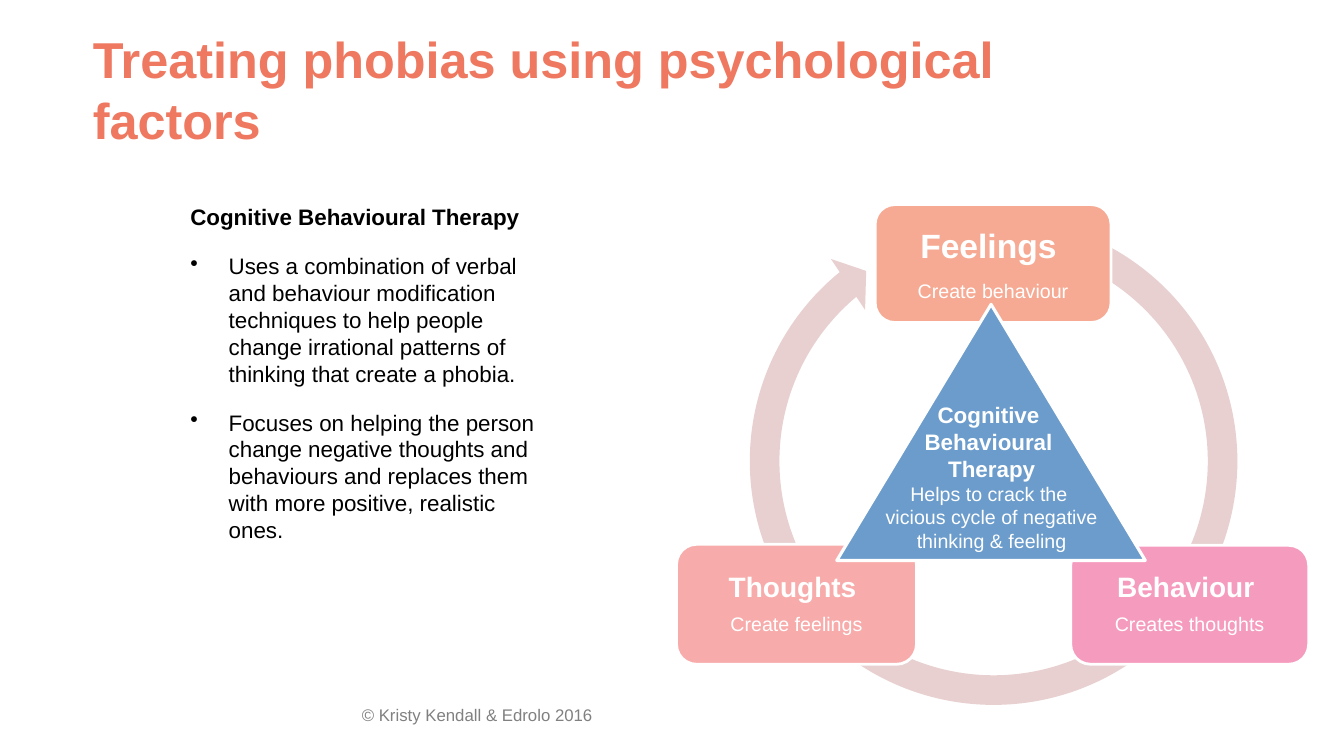
from lxml import etree
from pptx import Presentation
from pptx.dml.color import RGBColor
from pptx.enum import shapes, text
from pptx.oxml import ns
from pptx.util import Inches, Pt

COLORS = {
    "title": "EE7860", "body": "000000", "footer": "808080", "white": "FFFFFF",
    "ring": "E8D0D0", "feelings": "F6AA94", "behaviour": "F59CBE",
    "thoughts": "F7ACAB", "therapy": "6B9CCB",
}

prs = Presentation()
prs.slide_width, prs.slide_height = Inches(13.33), Inches(7.5)
s = prs.slides.add_slide(prs.slide_layouts[6])


def write(sp, lines, size=16, color="white", align=text.PP_ALIGN.LEFT,
          anchor=text.MSO_ANCHOR.TOP, inset=None, spacing=None,
          before=0, after=0):
    """Fill a shape with (text, format) lines; format may set size, bold, bullet, after."""
    tf = sp.text_frame
    tf.word_wrap = True
    tf.vertical_anchor = anchor
    if inset is not None:
        tf.margin_left = tf.margin_right = Inches(inset)
        tf.margin_top = tf.margin_bottom = Inches(inset)
    for i, (words, fmt) in enumerate(lines):
        p = tf.paragraphs[0] if i == 0 else tf.add_paragraph()
        if fmt.get("bullet"):
            pPr = p._p.get_or_add_pPr()
            pPr.set("marL", str(Inches(0.38)))
            pPr.set("indent", str(-Inches(0.38)))
            etree.SubElement(pPr, ns.qn("a:buChar")).set("char", "•")
        p.alignment = align
        p.line_spacing = spacing
        p.space_before = Pt(before if i else 0)
        p.space_after = Pt(fmt.get("after", after))
        r = p.add_run()
        r.text = words
        r.font.name = "Arial"
        r.font.size = Pt(fmt.get("size", size))
        r.font.bold = fmt.get("bold", False)
        r.font.color.rgb = RGBColor.from_string(COLORS[color])


def add_block(kind, box, fill, line=None):
    sp = s.shapes.add_shape(kind, *map(Inches, box))
    sp.shadow.inherit = False
    sp.fill.solid()
    sp.fill.fore_color.rgb = RGBColor.from_string(COLORS[fill])
    if line:
        sp.line.color.rgb = RGBColor.from_string(COLORS["white"])
        sp.line.width = Pt(line)
    else:
        sp.line.fill.background()
    return sp


footer = s.shapes.add_textbox(Inches(3.49), Inches(6.94), Inches(4.5), Inches(0.4))
write(footer, [("© Kristy Kendall & Edrolo 2016", {})], size=12, color="footer")

body = s.shapes.add_textbox(Inches(1.79), Inches(1.97), Inches(3.76), Inches(3.25))
write(body, [
    ("Cognitive Behavioural Therapy", {"bold": True}),
    ("Uses a combination of verbal and behaviour modification techniques to help "
     "people change irrational patterns of thinking that create a phobia.",
     {"bullet": True}),
    ("Focuses on helping the person change negative thoughts and behaviours and "
     "replaces them with more positive, realistic ones.", {"bullet": True}),
], color="body", before=3.7, after=12)

title = s.shapes.add_textbox(Inches(0.87), Inches(0.23), Inches(10.49), Inches(0.85))
write(title, [("Treating phobias using psychological factors", {"bold": True})],
      size=36, color="title", inset=0.05)

# Cycle of feelings, behaviour and thoughts
ring = add_block(shapes.MSO_SHAPE.CIRCULAR_ARROW, (7.28, 2, 5.15, 5.15), "ring")
for i, value in enumerate((0.057, 3.405, 138.312, 173.465, 0.059)):
    ring.adjustments[i] = value

stages = [
    ("feelings", (8.68, 2.03, 2.34, 1.17), "Feelings ", 24, "Create behaviour", 0.1, 1),
    ("behaviour", (10.62, 5.41, 2.36, 1.18), "Behaviour ", 20, "Creates thoughts", 0.08, 0.9),
    ("thoughts", (6.71, 5.4, 2.38, 1.19), "Thoughts ", 20, "Create feelings", 0.08, 0.9),
]
for fill, box, name, size, effect, inset, spacing in stages:
    stage = add_block(shapes.MSO_SHAPE.ROUNDED_RECTANGLE, box, fill, line=2)
    write(stage, [(name, {"size": size, "bold": True, "after": 0.4 * size}), (effect, {})],
          size=14, align=text.PP_ALIGN.CENTER, anchor=text.MSO_ANCHOR.MIDDLE,
          inset=inset, spacing=spacing)

# Therapy at the centre of the cycle
add_block(shapes.MSO_SHAPE.ISOSCELES_TRIANGLE, (8.3, 3.02, 3.06, 2.54), "therapy", line=2.25)
therapy = s.shapes.add_textbox(Inches(8.54), Inches(3.93), Inches(2.59), Inches(1.85))
write(therapy, [
    ("Cognitive ", {"size": 16, "bold": True}),
    ("Behavioural ", {"size": 16, "bold": True}),
    ("Therapy", {"size": 16, "bold": True}),
    ("Helps to crack the ", {}),
    ("vicious cycle of negative thinking & feeling", {}),
], size=14, align=text.PP_ALIGN.CENTER)

prs.save("out.pptx")
